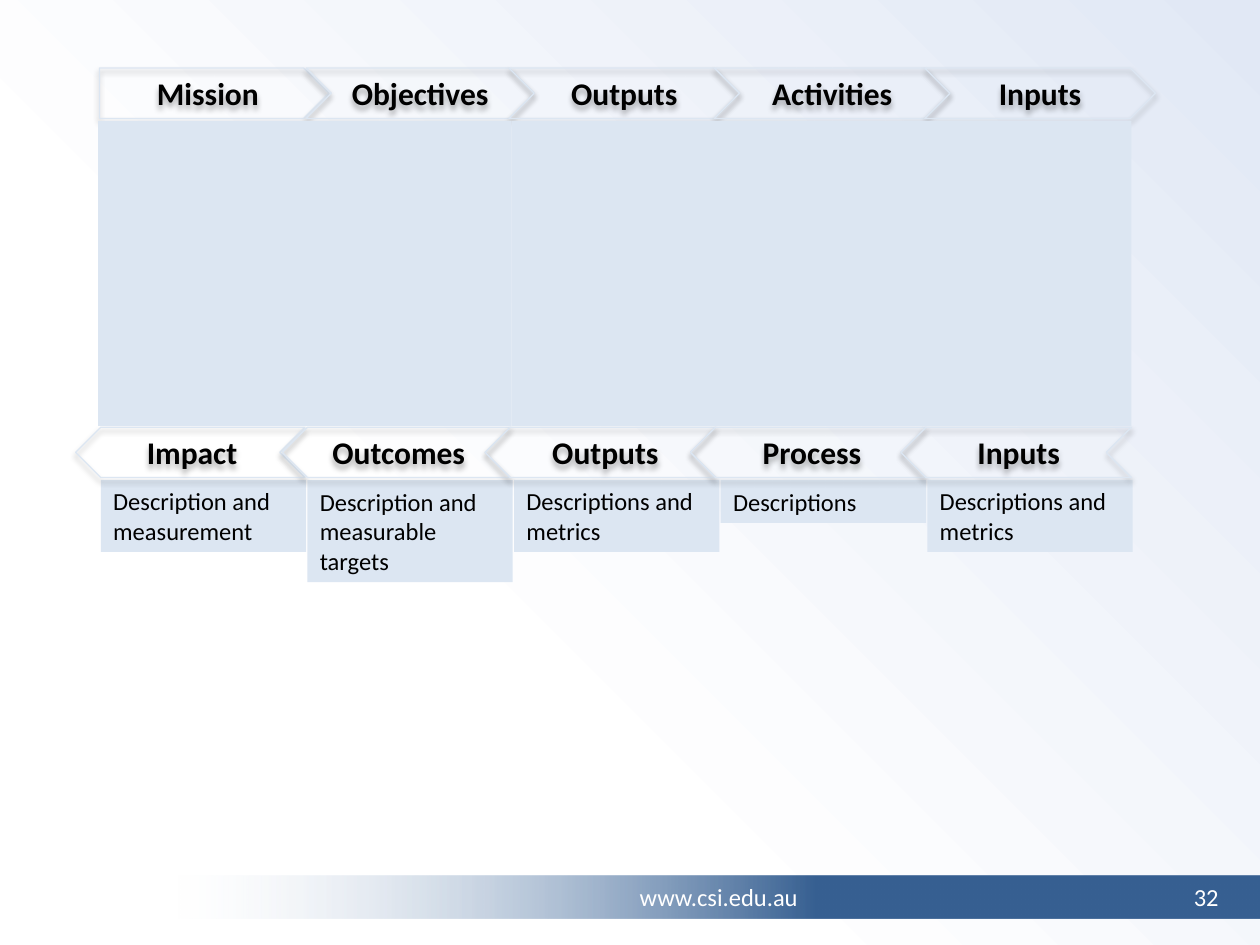
from pptx import Presentation
from pptx.dml.color import RGBColor
from pptx.enum.shapes import MSO_SHAPE
from pptx.enum.text import PP_ALIGN
from pptx.oxml import parse_xml
from pptx.oxml.ns import nsdecls, qn
from pptx.util import Inches, Pt

RECTANGLE, CHEVRON, PENTAGON = MSO_SHAPE.RECTANGLE, MSO_SHAPE.CHEVRON, MSO_SHAPE.PENTAGON
LEFT, CENTER, RIGHT = PP_ALIGN.LEFT, PP_ALIGN.CENTER, PP_ALIGN.RIGHT

BLACK = RGBColor(0x00, 0x00, 0x00)
WHITE = RGBColor(0xFF, 0xFF, 0xFF)
PALE_BLUE = RGBColor(0xDC, 0xE6, 0xF2)
DARK_BLUE = RGBColor(0x37, 0x60, 0x92)
BACKGROUND_BLUE = RGBColor(0xE1, 0xE8, 0xF5)

COLUMN_STEP = 1.64
ARROW_SPANS = [(0.79, 1.82), (2.43, 1.81), (4.04, 1.83), (5.67, 1.87), (7.34, 1.83)]
ARROW_HEIGHT = 0.4

PLANNING_STEPS = ["Mission", "Objectives", "Outputs", "Activities", "Inputs"]
MEASURES = [
    ("Impact", "Description and measurement", 0.57),
    ("Outcomes", "Description and measurable targets", 0.81),
    ("Outputs", "Descriptions and metrics", 0.57),
    ("Process", "Descriptions", 0.34),
    ("Inputs", "Descriptions and metrics", 0.57),
]


def replace_solid_fill(properties, stops, direction):
    """Swap a solid fill for a gradient; stops are (position %, colour, opacity %)."""
    stop_xml = "".join(
        f'<a:gs pos="{position * 1000}"><a:srgbClr val="{color}">'
        f'<a:alpha val="{opacity * 1000}"/></a:srgbClr></a:gs>'
        for position, color, opacity in stops
    )
    gradient = parse_xml(
        f'<a:gradFill {nsdecls("a")} rotWithShape="1">'
        f"<a:gsLst>{stop_xml}</a:gsLst>{direction}</a:gradFill>"
    )
    properties.replace(properties.find(qn("a:solidFill")), gradient)


def add_soft_shadow(shape):
    shape._element.spPr.append(parse_xml(
        f'<a:effectLst {nsdecls("a")}>'
        '<a:outerShdw blurRad="44450" dist="27940" dir="5400000" algn="ctr">'
        '<a:srgbClr val="000000"><a:alpha val="32000"/></a:srgbClr>'
        "</a:outerShdw></a:effectLst>"
    ))


def write_text(shape, text, size, color=BLACK, alignment=LEFT, bold=False):
    shape.text_frame.word_wrap = True
    paragraph = shape.text_frame.paragraphs[0]
    paragraph.text = text
    paragraph.alignment = alignment
    paragraph.font.name = "Calibri"
    paragraph.font.size = Pt(size)
    paragraph.font.bold = bold
    paragraph.font.color.rgb = color


def add_box(slide, left, top, width, height, color=PALE_BLUE):
    box = slide.shapes.add_shape(
        RECTANGLE, Inches(left), Inches(top), Inches(width), Inches(height))
    box.shadow.inherit = False
    box.fill.solid()
    box.fill.fore_color.rgb = color
    box.line.fill.background()
    return box


def add_text_box(slide, left, top, width, height, text, size, **style):
    box = slide.shapes.add_textbox(
        Inches(left), Inches(top), Inches(width), Inches(height))
    write_text(box, text, size, **style)
    return box


def add_arrow(slide, kind, left, top, width):
    arrow = slide.shapes.add_shape(
        kind, Inches(left), Inches(top), Inches(width), Inches(ARROW_HEIGHT))
    arrow.fill.background()
    arrow.line.color.rgb = PALE_BLUE
    arrow.line.width = Pt(0.75)
    add_soft_shadow(arrow)
    return arrow


def add_background(slide):
    slide.background.fill.solid()
    replace_solid_fill(
        slide.element.find(".//" + qn("p:bgPr")),
        [(35, WHITE, 100), (100, BACKGROUND_BLUE, 100)],
        '<a:path path="circle"><a:fillToRect t="100000" r="100000"/></a:path>',
    )


def add_footer(slide, left, top, width, height):
    bar = add_box(slide, left, top, width, height)
    replace_solid_fill(
        bar._element.spPr,
        [(0, PALE_BLUE, 0), (59, DARK_BLUE, 100)],
        '<a:lin ang="0" scaled="1"/>',
    )
    write_text(bar, "www.csi.edu.au", 14, WHITE, CENTER)
    add_text_box(slide, left + width - 0.78, top, 0.55, height, "32", 14,
                 color=WHITE, alignment=RIGHT)


def add_measures(slide, left, top):
    """Left-pointing arrows with their labels, and a description under each."""
    for column, (label, description, height) in enumerate(MEASURES):
        column_left = left + column * COLUMN_STEP
        caption = add_box(slide, column_left + 0.02, top + 0.42, 1.63, height)
        write_text(caption, description, 14)
        arrow_left, arrow_width = ARROW_SPANS[column]
        add_arrow(slide, CHEVRON, arrow_left - 0.19, top, arrow_width).rotation = 180
        label_box = add_text_box(slide, column_left - 0.07, top, 1.63, ARROW_HEIGHT,
                                 label, 18, alignment=CENTER, bold=True)
        add_soft_shadow(label_box)


def add_planning_steps(slide, left, top):
    """Right-pointing arrows above a row of empty panels."""
    for column, step in enumerate(PLANNING_STEPS):
        arrow_left, arrow_width = ARROW_SPANS[column]
        kind = CHEVRON if column else PENTAGON
        arrow = add_arrow(slide, kind, arrow_left, top, arrow_width)
        write_text(arrow, step, 18, alignment=CENTER, bold=True)
    for column in range(len(PLANNING_STEPS)):
        add_box(slide, left + column * COLUMN_STEP, top + 0.42, COLUMN_STEP, 2.42)


def main():
    presentation = Presentation()
    presentation.slide_width = Inches(10)
    presentation.slide_height = Inches(7.5)
    slide = presentation.slides.add_slide(presentation.slide_layouts[6])
    add_background(slide)
    add_footer(slide, 1.41, 6.95, 8.59, 0.34)
    add_measures(slide, 0.78, 3.39)
    add_planning_steps(slide, 0.78, 0.54)
    presentation.save("out.pptx")


if __name__ == "__main__":
    main()
